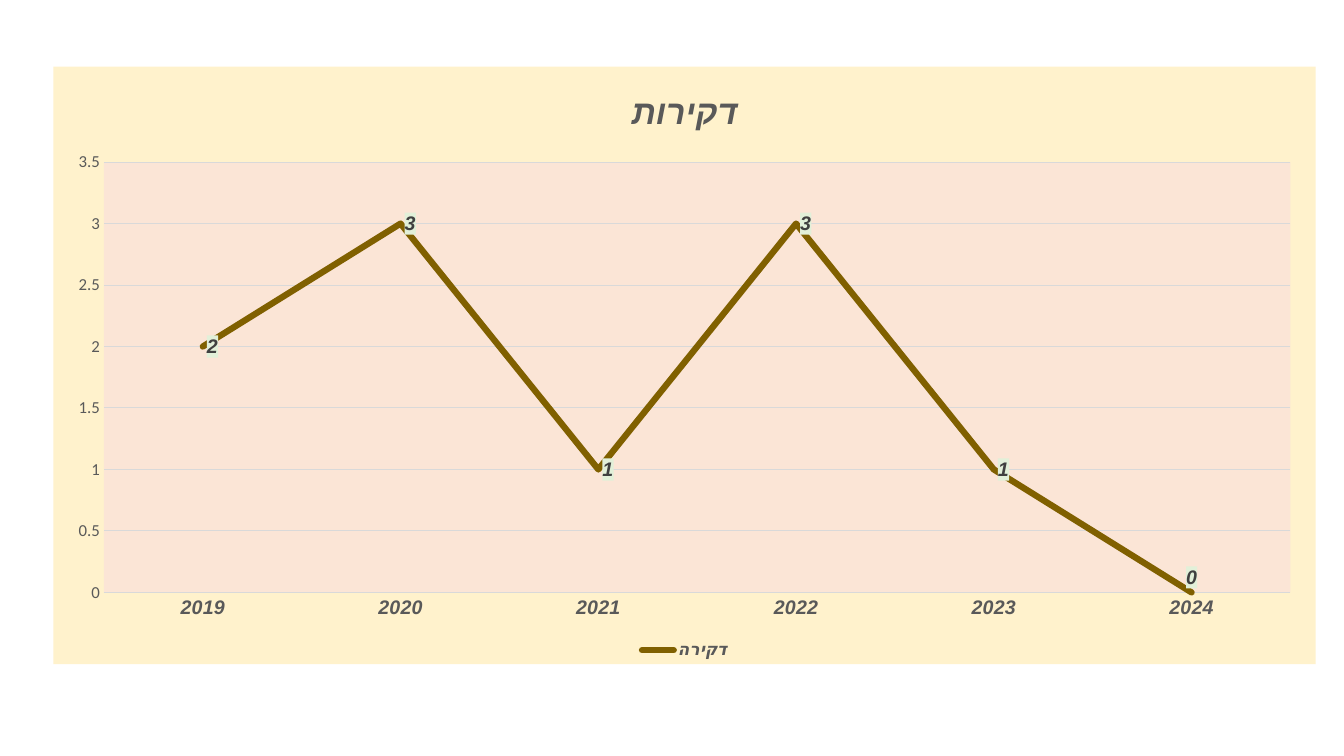
"""Builds a slide with a line chart of yearly stabbing counts."""
import pptx
import pptx.chart.data
import pptx.dml.color
import pptx.enum.chart
import pptx.oxml
import pptx.oxml.ns
import pptx.util

Inches, Pt = pptx.util.Inches, pptx.util.Pt
RGBColor = pptx.dml.color.RGBColor
qn = pptx.oxml.ns.qn
xl = pptx.enum.chart

CREAM = RGBColor(0xFF, 0xF2, 0xCC)
PEACH = RGBColor(0xFB, 0xE5, 0xD6)
MINT = RGBColor(0xE2, 0xF0, 0xD9)
BROWN = RGBColor(0x80, 0x60, 0x00)
GRAY = RGBColor(0x59, 0x59, 0x59)
DARK = RGBColor(0x40, 0x40, 0x40)
LIGHT = RGBColor(0xD9, 0xD9, 0xD9)

BOLD_ITALIC = {"bold": True, "italic": True}
STYLES = {
    "title": {"size": Pt(24), "name": "Arial", **BOLD_ITALIC},
    "category": {"size": Pt(14), "name": "Arial", **BOLD_ITALIC},
    "value": {"size": Pt(12), "name": "Calibri", "bold": False},
    "legend": {"size": Pt(12), "name": "Calibri", **BOLD_ITALIC},
    "label": {"size": Pt(14), "name": "Arial", **BOLD_ITALIC},
}
PLOT_LAYOUT = {"x": 0.04, "y": 0.16, "w": 0.94, "h": 0.72}


class SlideBuilder:
    def __init__(self, prs):
        self.slide = prs.slides.add_slide(prs.slide_layouts[6])

    def font(self, font, style, color=GRAY):
        for key, value in STYLES[style].items():
            setattr(font, key, value)
        font.color.rgb = color
        latin = font._element.find(qn("a:latin"))
        latin.addnext(self.xml(f'<a:cs {{ns}} typeface="{font.name}"/>'))

    def xml(self, text):
        return pptx.oxml.parse_xml(text.format(ns=pptx.oxml.ns.nsdecls("a", "c")))

    def fill(self, color):
        return self.xml(
            f'<c:spPr {{ns}}><a:solidFill><a:srgbClr val="{color}"/></a:solidFill>'
            "<a:ln><a:noFill/></a:ln></c:spPr>")

    def line_chart(self, title, name, counts, left, top, width, height):
        data = pptx.chart.data.CategoryChartData()
        data.categories = list(counts)
        data.add_series(name, list(counts.values()))
        chart = self.slide.shapes.add_chart(
            xl.XL_CHART_TYPE.LINE, Inches(left), Inches(top),
            Inches(width), Inches(height), data).chart
        chart.font.size, chart.font.name = Pt(10), "Calibri"
        self.title(chart, title)
        self.legend(chart)
        self.axes(chart)
        self.series(chart.plots[0].series[0])
        self.areas(chart)

    def title(self, chart, text):
        chart.has_title = True
        chart.chart_title.include_in_layout = False
        p = chart.chart_title.text_frame.paragraphs[0]
        r = p.add_run()
        r.text = text
        self.font(r.font, "title")

    def legend(self, chart):
        chart.has_legend = True
        chart.legend.position = xl.XL_LEGEND_POSITION.BOTTOM
        chart.legend.include_in_layout = False
        self.font(chart.legend.font, "legend")

    def axes(self, chart):
        for axis, style in ((chart.category_axis, "category"), (chart.value_axis, "value")):
            axis.major_tick_mark = axis.minor_tick_mark = xl.XL_TICK_MARK.NONE
            self.font(axis.tick_labels.font, style)
        value_axis = chart.value_axis
        value_axis.minimum_scale, value_axis.maximum_scale = 0, 3.5
        value_axis.major_unit = 0.5
        value_axis.format.line.fill.background()
        for line in (chart.category_axis.format.line, value_axis.major_gridlines.format.line):
            line.color.rgb, line.width = LIGHT, Pt(0.75)

    def series(self, series):
        series.smooth = False
        series.marker.style = xl.XL_MARKER_STYLE.NONE
        line = series.format.line
        line.color.rgb, line.width = BROWN, Pt(4.5)
        series._element.find(qn("c:spPr")).find(qn("a:ln")).set("cap", "rnd")
        series.data_labels.show_value = True
        self.label(series.data_labels, xl.XL_LABEL_POSITION.RIGHT)
        last = len(series.values) - 1
        self.label(series.points[last].data_label, xl.XL_LABEL_POSITION.ABOVE)

    def label(self, label, position):
        label.position = position
        font = label.font
        self.font(font, "label", DARK)
        text = next(font._element.iterancestors(qn("c:txPr")))
        text.addprevious(self.fill(MINT))

    def areas(self, chart):
        space = chart._chartSpace
        space.chart.addnext(self.fill(CREAM))
        plot = space.chart.plotArea
        plot.append(self.fill(PEACH))
        for old in plot.findall(qn("c:layout")):
            plot.remove(old)
        modes = "".join(f'<c:{k}Mode val="edge"/>' for k in "xy")
        sizes = "".join(f'<c:{k} val="{v}"/>' for k, v in PLOT_LAYOUT.items())
        plot.insert(0, self.xml(
            '<c:layout {ns}><c:manualLayout><c:layoutTarget val="inner"/>'
            + modes + sizes + "</c:manualLayout></c:layout>"))


def main():
    prs = pptx.Presentation()
    prs.slide_width, prs.slide_height = Inches(13.33), Inches(7.5)
    counts = {"2019": 2, "2020": 3, "2021": 1, "2022": 3, "2023": 1, "2024": 0}
    SlideBuilder(prs).line_chart("דקירות", "דקירה", counts, 0.53, 0.66, 12.52, 5.93)
    prs.save("out.pptx")


if __name__ == "__main__":
    main()
